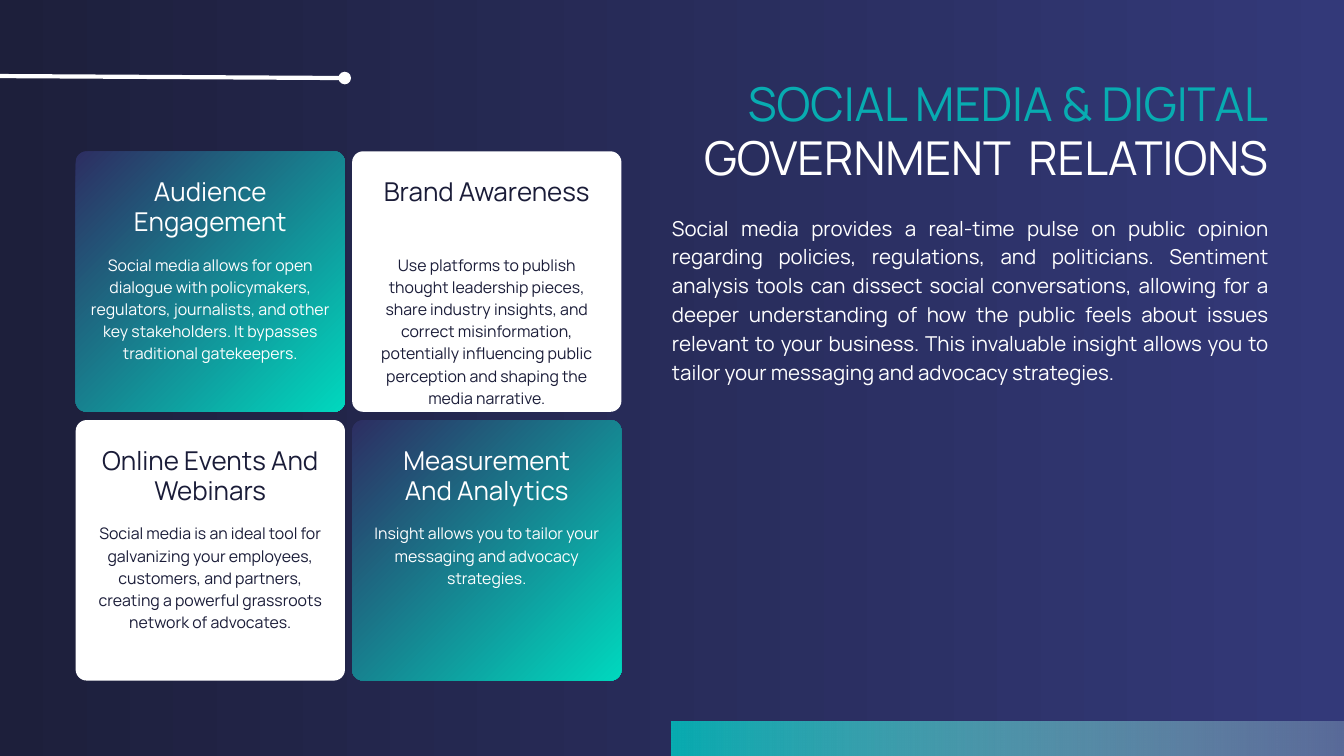
from dataclasses import dataclass

from lxml import etree
from pptx import Presentation
from pptx.dml.color import RGBColor
from pptx.enum.shapes import MSO_CONNECTOR, MSO_SHAPE
from pptx.enum.text import MSO_AUTO_SIZE, PP_ALIGN
from pptx.oxml.ns import qn
from pptx.util import Cm, Pt

RECTANGLE = MSO_SHAPE.RECTANGLE
ROUNDED = MSO_SHAPE.ROUNDED_RECTANGLE
STRAIGHT = MSO_CONNECTOR.STRAIGHT
FIT_SHAPE = MSO_AUTO_SIZE.SHAPE_TO_FIT_TEXT
CENTER, RIGHT, JUSTIFY = PP_ALIGN.CENTER, PP_ALIGN.RIGHT, PP_ALIGN.JUSTIFY

FONT = "Manrope"
WHITE, NAVY, TEAL = "FFFFFF", "1A1C38", "08ACB1"
BACKGROUND = ("1D1F3B", "333979")
CARD_GRADIENT = ("2D2E62", "00D8BE")

# Card grid, in centimetres
GRID_LEFT, GRID_TOP = 2.86, 5.72
CARD_WIDTH, CARD_HEIGHT = 10.18, 9.85
COLUMN_STEP, ROW_STEP = 10.45, 10.16
CORNER_RADIUS = 0.42
HEADING_OFFSET, BODY_OFFSET = 0.97, 3.81
HEADING_HEIGHT, BODY_WIDTH = 2.34, 9.04

INTRO = (
    "Social media provides a real-time pulse on public opinion regarding policies, "
    "regulations, and politicians. Sentiment analysis tools can dissect social "
    "conversations, allowing for a deeper understanding of how the public feels about "
    "issues relevant to your business. This invaluable insight allows you to tailor "
    "your messaging and advocacy strategies."
)


@dataclass
class Card:
    heading: str
    heading_width: float
    body: str
    body_height: float


CARDS = [
    Card("Audience Engagement", 7.9,
         "Social media allows for open dialogue with policymakers, regulators, "
         "journalists, and other key stakeholders. It bypasses traditional gatekeepers.",
         4.95),
    Card("Brand Awareness", 7.9,
         "Use platforms to publish thought leadership pieces, share industry insights, "
         "and correct misinformation, potentially influencing public perception and "
         "shaping the media narrative.",
         6.6),
    Card("Online Events And Webinars", 9.04,
         "Social media is an ideal tool for galvanizing your employees, customers, and "
         "partners, creating a powerful grassroots network of advocates.",
         5.79),
    Card("Measurement And Analytics", 7.9,
         "Insight allows you to tailor your messaging and advocacy strategies.",
         2.49),
]


def color(hex_value):
    return RGBColor.from_string(hex_value)


def fill_gradient(fill, colors, angle=0):
    """Two-colour linear gradient; the angle runs counter-clockwise."""
    fill.gradient()
    fill.gradient_angle = angle
    for stop, hex_value in zip(fill.gradient_stops, colors):
        stop.color.rgb = color(hex_value)


def add_panel(slide, kind, left, top, width, height):
    """Shape without outline or shadow; the caller fills it."""
    shape = slide.shapes.add_shape(kind, Cm(left), Cm(top), Cm(width), Cm(height))
    shape.shadow.inherit = False
    shape.line.fill.background()
    return shape


def add_text(slide, text, left, top, width, height, size, spacing, hex_value, alignment):
    box = slide.shapes.add_textbox(Cm(left), Cm(top), Cm(width), Cm(height))
    frame = box.text_frame
    frame.word_wrap = True
    frame.auto_size = FIT_SHAPE
    frame.margin_left = frame.margin_right = 0
    frame.margin_top = frame.margin_bottom = 0
    paragraph = frame.paragraphs[0]
    paragraph.text = text
    paragraph.alignment = alignment
    paragraph.line_spacing = Pt(spacing)
    paragraph.font.name = FONT
    paragraph.font.size = Pt(size)
    paragraph.font.color.rgb = color(hex_value)


def add_card(slide, card, row, column):
    left = GRID_LEFT + column * COLUMN_STEP
    top = GRID_TOP + row * ROW_STEP
    center = left + CARD_WIDTH / 2
    panel = add_panel(slide, ROUNDED, left, top, CARD_WIDTH, CARD_HEIGHT)
    panel.adjustments[0] = CORNER_RADIUS / CARD_HEIGHT
    if row == column:
        fill_gradient(panel.fill, CARD_GRADIENT, 315)
        text_color = WHITE
    else:
        panel.fill.solid()
        panel.fill.fore_color.rgb = color(WHITE)
        text_color = NAVY
    add_text(slide, card.heading, center - card.heading_width / 2, top + HEADING_OFFSET,
             card.heading_width, HEADING_HEIGHT, 27.8, 31.9, text_color, CENTER)
    add_text(slide, card.body, center - BODY_WIDTH / 2, top + BODY_OFFSET,
             BODY_WIDTH, card.body_height, 17, 23.8, text_color, CENTER)


def add_dotted_end_line(slide, start_x, start_y, end_x, end_y):
    """White line with a round dot at each end."""
    connector = slide.shapes.add_connector(
        STRAIGHT, Cm(start_x), Cm(start_y), Cm(end_x), Cm(end_y))
    connector.line.color.rgb = color(WHITE)
    connector.line.width = Pt(4.5)
    line = connector.line._get_or_add_ln()
    for end in ("a:headEnd", "a:tailEnd"):
        etree.SubElement(line, qn(end), type="oval")
    etree.SubElement(connector._element.spPr, qn("a:effectLst"))


def add_fading_bar(slide, left, top, width, height):
    bar = add_panel(slide, RECTANGLE, left, top, width, height)
    fill_gradient(bar.fill, (TEAL, WHITE))
    last_color = bar._element.xpath(".//a:gs[last()]/a:srgbClr")[0]
    etree.SubElement(last_color, qn("a:alpha"), val="0")


def main():
    presentation = Presentation()
    presentation.slide_width = Cm(50.8)
    presentation.slide_height = Cm(28.58)
    slide = presentation.slides.add_slide(presentation.slide_layouts[6])
    fill_gradient(slide.background.fill, BACKGROUND)

    for index, card in enumerate(CARDS):
        row, column = divmod(index, 2)
        add_card(slide, card, row, column)

    add_text(slide, "SOCIAL MEDIA & DIGITAL", 22.17, 2.46, 25.78, 2.51,
             50, 70, TEAL, RIGHT)
    add_text(slide, "GOVERNMENT  RELATIONS", 24.92, 4.52, 23.03, 2.51,
             50, 70, WHITE, RIGHT)
    add_text(slide, INTRO, 25.4, 8, 22.55, 8.69, 22, 30.8, WHITE, JUSTIFY)

    add_dotted_end_line(slide, -6.12, 2.84, 13.03, 2.95)
    add_fading_bar(slide, 25.4, 27.28, 35.28, 3.63)
    presentation.save("out.pptx")


if __name__ == "__main__":
    main()
